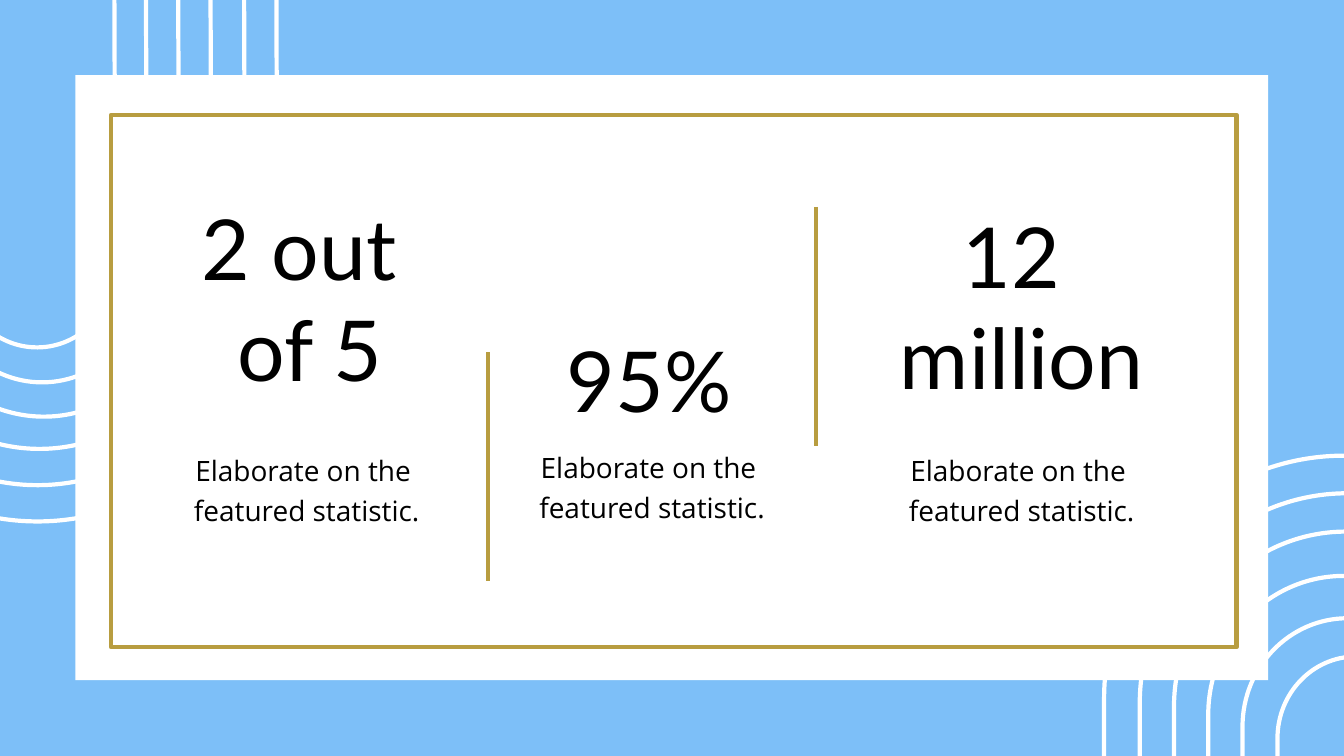
from lxml import etree
from pptx import Presentation
from pptx import util as u
from pptx.dml.color import RGBColor
from pptx.enum import shapes, text
from pptx.oxml.ns import qn

BLUE, WHITE, GOLD, BLACK = "7DBFF8", "FFFFFF", "B89D40", "000000"


def paint(fmt, color):
    """Give a fill, or the fill of a line, one solid colour."""
    fmt.solid()
    fmt.fore_color.rgb = RGBColor.from_string(color)


def add_text(box, lines, font, size, color, spacing, anchor):
    """Add a centred text box with one paragraph per line."""
    tf = s.shapes.add_textbox(*map(u.Inches, box)).text_frame
    frame = dict(word_wrap=True, vertical_anchor=anchor, margin_left=0,
                 margin_right=0, margin_top=0, margin_bottom=0)
    for name, value in frame.items():
        setattr(tf, name, value)
    for i, line in enumerate(lines):
        p = tf.paragraphs[0] if i == 0 else tf.add_paragraph()
        p.alignment = text.PP_ALIGN.CENTER
        if spacing:
            p.line_spacing = spacing
        r = p.add_run()
        r.text = line
        for name, value in dict(name=font, size=u.Pt(size)).items():
            setattr(r.font, name, value)
        paint(r.font.fill, color)


prs = Presentation()
prs.slide_width, prs.slide_height = u.Inches(20), u.Inches(11.25)
s = prs.slides.add_slide(prs.slide_layouts[6])
paint(s.background.fill, BLUE)

# Nested arches: the same six sizes hang at top left and stand at bottom right
sizes = [(7.14, 11.61), (6.18, 10.53), (5.12, 9.26),
         (4.03, 8.01), (3.12, 6.98), (2.33, 6)]
groups = [
    (359.8, [(-3.02, -3.85), (-2.54, -3.31), (-1.98, -2.58),
             (-1.37, -1.81), (-0.94, -1.29), (-0.62, -0.83)]),
    (180, [(16.43, 6.78), (16.96, 7.34), (17.47, 7.91),
           (17.98, 8.57), (18.49, 9.2), (19.01, 9.77)]),
]
BEND = 0.55  # control point distance of a quarter circle
for rotation, corners in groups:
    for (x, y), (w, h) in zip(corners, sizes):
        mid, cap = w / 2, w / 2 + 0.05
        shoulder = h - cap
        outline = [(w, shoulder), (mid, h), (0, shoulder), (0, 0)]
        fb = s.shapes.build_freeform(u.Inches(x + w), u.Inches(y))
        fb.add_line_segments([(u.Inches(x + px), u.Inches(y + py))
                              for px, py in outline])
        sp = fb.convert_to_shape()

        # Turn the two segments at the tip into quarter curves
        low, reach = shoulder + BEND * cap, BEND * mid
        controls = [[(w, low), (mid + reach, h)], [(mid - reach, h), (0, low)]]
        segments = list(sp._element.iter(qn("a:lnTo")))[1:3]
        for segment, handles in zip(segments, controls):
            segment.tag = qn("a:cubicBezTo")
            for i, (px, py) in enumerate(handles):
                pt = etree.Element(qn("a:pt"), x=str(u.Inches(px)),
                                   y=str(u.Inches(py)))
                segment.insert(i, pt)

        sp.rotation = rotation
        sp.shadow.inherit = False
        sp.fill.background()
        paint(sp.line.fill, WHITE)
        sp.line.width = u.Pt(4.5)

# White panel and gold frame
for box, fill, line in [((1.12, 1.12, 17.75, 9), WHITE, None),
                        ((1.65, 1.71, 16.75, 7.92), None, GOLD)]:
    sp = s.shapes.add_shape(shapes.MSO_SHAPE.RECTANGLE, *map(u.Inches, box))
    sp.shadow.inherit = False
    for fmt, color in [(sp.fill, fill), (sp.line.fill, line)]:
        if color:
            paint(fmt, color)
        else:
            fmt.background()
    if line:
        sp.line.width = u.Pt(4.5)

# Statistics: figure above its caption
stats = [
    ((2.92, 2.18, 3.38, 4.48), ["2 out ", "of 5"], None, (2.72, 6.65)),
    ((7.97, 5.46, 3.38, 0.92), ["95%"], 0.5, (7.86, 6.6)),
    ((12.87, 3.08, 4.67, 2.94), ["12 ", "million"], None, (13.36, 6.65)),
]
caption = ["Elaborate on the ", "featured statistic."]
for box, figure, spacing, corner in stats:
    add_text(box, figure, "Lato", 90, BLACK, spacing, text.MSO_ANCHOR.MIDDLE)
    add_text((*corner, 3.69, 1.11), caption, "Open Sans", 30, BLACK, 1.2,
             text.MSO_ANCHOR.TOP)

# Gold dividers
for x, top, bottom in [(7.26, 5.24, 8.65), (12.14, 3.08, 6.63)]:
    cn = s.shapes.add_connector(shapes.MSO_CONNECTOR.STRAIGHT,
                                *map(u.Inches, (x, top, x, bottom)))
    paint(cn.line.fill, GOLD)
    cn.line.width = u.Pt(4.5)
    etree.SubElement(cn._element.spPr, qn("a:effectLst"))

prs.save("out.pptx")
